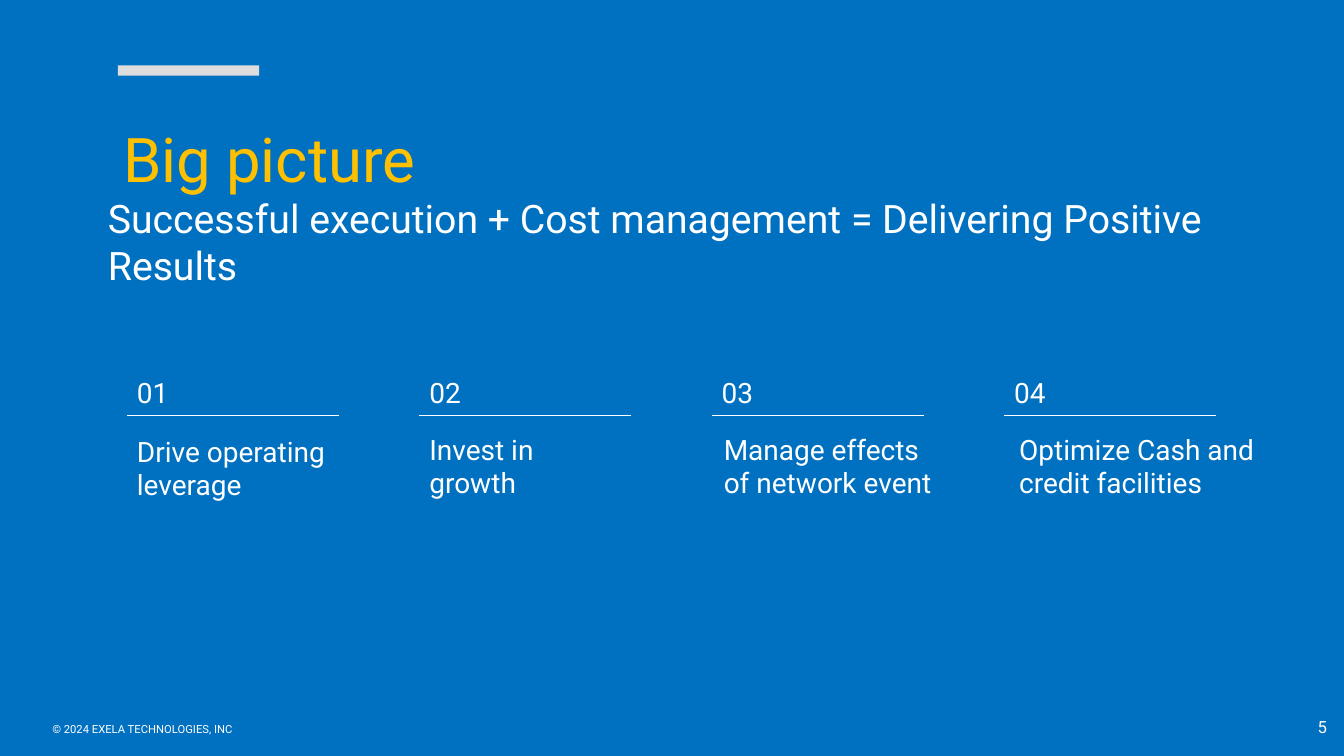
"""Build the big picture slide with four numbered priorities."""
import pptx
import pptx.dml.color
import pptx.enum.shapes
import pptx.enum.text
import pptx.oxml.ns
import pptx.util
from lxml import etree

Inches = pptx.util.Inches
ALIGN = pptx.enum.text.PP_ALIGN
ANCHOR = pptx.enum.text.MSO_ANCHOR
FONT = "Roboto"
WHITE, GOLD, GREY, BLUE = "FFFFFF", "FFC000", "DDDDDD", "0070C0"
COLUMN_LEFT, COLUMN_STEP, COLUMN_TOP = 1.26, 2.9, 3.67
PRIORITIES = [
    ("Drive operating leverage", 0, 0.59, 2.5),
    ("Invest in growth", 0, 0.57, 2.1),
    ("Manage effects of network event", 0.02, 0.57, 2.42),
    ("Optimize Cash and credit facilities", 0.05, 0.57, 2.6),
]


def color(value):
    """Return the colour for a hex string."""
    return pptx.dml.color.RGBColor.from_string(value)


def add_span(para, text, size, shade=WHITE):
    """Add one formatted run to a paragraph."""
    span = para.add_run()
    span.text = text
    span.font.name = FONT
    span.font.size = pptx.util.Pt(size)
    span.font.color.rgb = color(shade)


def add_text(page, text, left, top, width, height, size,
             anchor=ANCHOR.TOP, align=ALIGN.LEFT):
    """Add a wrapped text box holding one run."""
    box = page.shapes.add_textbox(
        Inches(left), Inches(top), Inches(width), Inches(height))
    box.text_frame.word_wrap = True
    box.text_frame.vertical_anchor = anchor
    para = box.text_frame.paragraphs[0]
    para.alignment = align
    add_span(para, text, size)


def add_heading(page, left, top, width, height):
    """Place the accent bar and the two-part title."""
    bar = page.shapes.add_shape(
        pptx.enum.shapes.MSO_SHAPE.RECTANGLE,
        Inches(left + 0.2), Inches(top - 0.35), Inches(1.4), Inches(0.1))
    bar.shadow.inherit = False
    bar.fill.solid()
    bar.fill.fore_color.rgb = color(GREY)
    bar.line.fill.background()
    title = page.shapes.title
    title.left, title.top = Inches(left), Inches(top)
    title.width, title.height = Inches(width), Inches(height)
    frame = title.text_frame
    frame.word_wrap = True
    frame.auto_size = pptx.enum.text.MSO_AUTO_SIZE.NONE
    frame.vertical_anchor = ANCHOR.MIDDLE
    para = frame.paragraphs[0]
    para.alignment = ALIGN.LEFT
    add_span(para, " Big picture", 44, GOLD)
    para.add_line_break()
    add_span(para, "Successful execution + Cost management = "
             "Delivering Positive Results", 28)


def add_priority(page, number, priority, left, top):
    """Place a number, its rule and its label in one column."""
    label, shift, drop, width = priority
    add_text(page, f"{number:02d}", left, top, 1.7, 0.44, 20, ANCHOR.MIDDLE)
    rule = page.shapes.add_connector(
        pptx.enum.shapes.MSO_CONNECTOR.STRAIGHT,
        Inches(left), Inches(top + 0.45), Inches(left + 2.1), Inches(top + 0.45))
    rule.line.color.rgb = color(WHITE)
    rule.line.width = pptx.util.Pt(0.5)
    etree.SubElement(rule._element.spPr, pptx.oxml.ns.qn("a:effectLst"))
    add_text(page, label, left + shift, top + drop, width, 0.77, 20)


def add_footer(page, left, top, right):
    """Place the copyright line and the page number."""
    add_text(page, "© 2024 EXELA TECHNOLOGIES, INC", left, top, 4.05, 0.24, 8)
    add_text(page, "5", right - 3, top - 0.11, 3, 0.4, 12,
             ANCHOR.MIDDLE, ALIGN.RIGHT)


def main():
    """Build and save the deck."""
    deck = pptx.Presentation()
    deck.slide_width, deck.slide_height = Inches(13.33), Inches(7.5)
    page = deck.slides.add_slide(deck.slide_layouts.get_by_name("Title Only"))
    page.background.fill.solid()
    page.background.fill.fore_color.rgb = color(BLUE)
    add_heading(page, 0.97, 1, 12.29, 2.06)
    for index, priority in enumerate(PRIORITIES):
        add_priority(page, index + 1, priority,
                     COLUMN_LEFT + index * COLUMN_STEP, COLUMN_TOP)
    add_footer(page, 0.42, 7.12, 13.26)
    deck.save("out.pptx")


if __name__ == "__main__":
    main()
